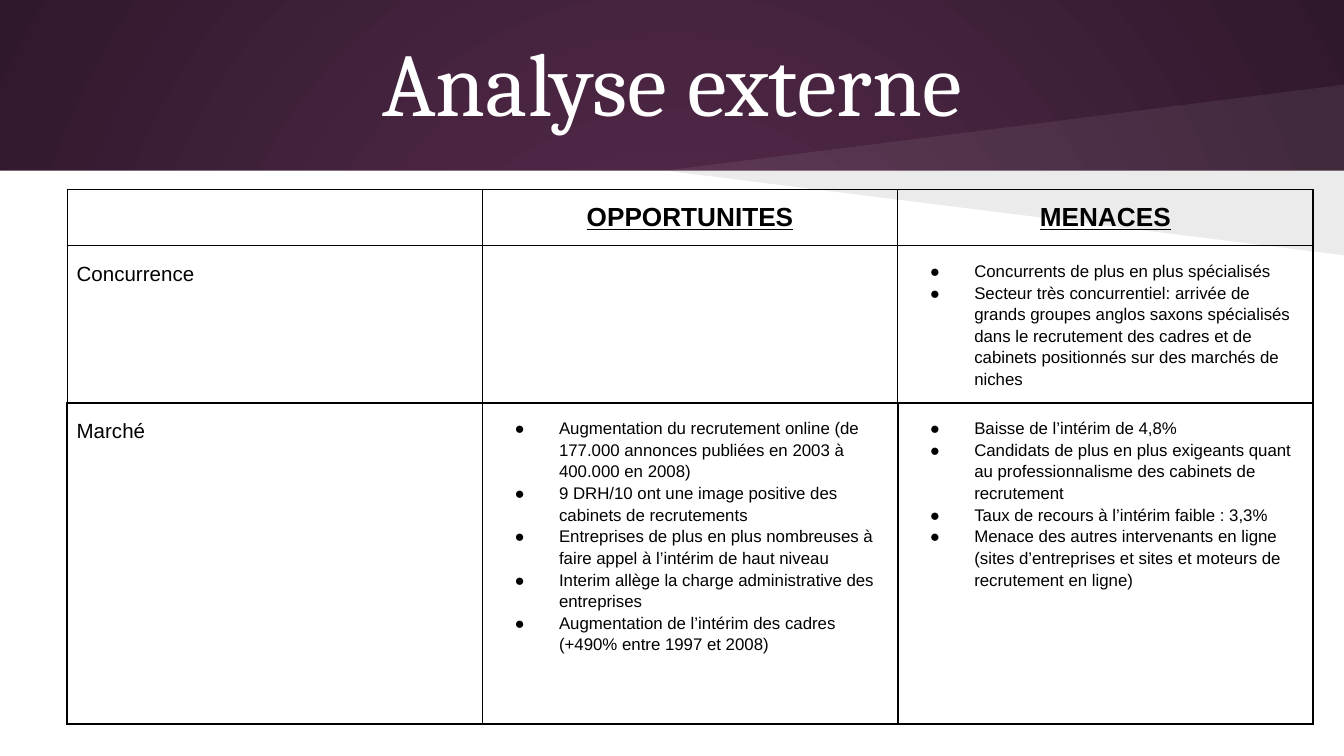
from lxml import etree
from pptx import Presentation
from pptx.dml.color import RGBColor
from pptx.enum import shapes, text
from pptx.oxml import ns
from pptx.util import Inches, Pt

COLORS = {"centre": "592D50", "edge": "30182B", "white": "FFFFFF", "black": "000000"}
SLIDE_WIDTH = 10
SLIDE_HEIGHT = SLIDE_WIDTH * 9 / 16
BAND_BOTTOM = 1.27

OPPORTUNITIES = [
    "Augmentation du recrutement online (de 177.000 annonces publiées en 2003 à 400.000 en 2008)",
    "9 DRH/10 ont une image positive des cabinets de recrutements",
    "Entreprises de plus en plus nombreuses à faire appel à l’intérim de haut niveau",
    "Interim allège la charge administrative des entreprises",
    "Augmentation de l’intérim des cadres (+490% entre 1997 et 2008)",
]
COMPETITION_THREATS = [
    "Concurrents de plus en plus spécialisés",
    "Secteur très concurrentiel: arrivée de grands groupes anglos saxons spécialisés "
    "dans le recrutement des cadres et de cabinets positionnés sur des marchés de niches",
]
MARKET_THREATS = [
    "Baisse de l’intérim de 4,8%",
    "Candidats de plus en plus exigeants quant au professionnalisme des cabinets de recrutement",
    "Taux de recours à l’intérim faible : 3,3%",
    "Menace des autres intervenants en ligne (sites d’entreprises et sites et moteurs "
    "de recrutement en ligne)",
]
ROWS = [
    ([], ["OPPORTUNITES"], ["MENACES"]),
    (["Concurrence"], [], COMPETITION_THREATS),
    (["Marché"], OPPORTUNITIES, MARKET_THREATS),
]
ROW_HEIGHTS = [0.42, 1.17, 2.39]


def rgb(name):
    return RGBColor.from_string(COLORS[name])


def add_child(parent, tag, **attributes):
    return etree.SubElement(parent, ns.qn(tag), attributes)


def paint(shape, color, alpha=None):
    shape.shadow.inherit = False
    shape.line.fill.background()
    shape.fill.solid()
    shape.fill.fore_color.rgb = rgb(color)
    if alpha is not None:
        color_element = shape.element.spPr.find(".//" + ns.qn("a:srgbClr"))
        add_child(color_element, "a:alpha", val=str(alpha * 1000))


def set_background(slide):
    """Radial gradient, from the centre to the edges."""
    fill = slide.background.fill
    fill.gradient()
    for stop, color, position in zip(fill.gradient_stops, ("centre", "edge"), (0, 1)):
        stop.color.rgb = rgb(color)
        stop.position = position
    gradient = slide.element.find(".//" + ns.qn("a:gradFill"))
    gradient.remove(gradient.find(ns.qn("a:lin")))
    circle = add_child(gradient, "a:path", path="circle")
    add_child(circle, "a:fillToRect", l="50000", t="50000", r="50000", b="50000")


def add_wedge(slide, left, top, width, height, color, alpha):
    """Triangle from a point at the left; a negative height opens upwards."""
    builder = slide.shapes.build_freeform(Inches(left), Inches(top))
    builder.add_line_segments([
        (Inches(left + width), Inches(top)),
        (Inches(left + width), Inches(top + height)),
    ])
    paint(builder.convert_to_shape(), color, alpha)


def add_backdrop(slide, left, top, width, height):
    panel = slide.shapes.add_shape(
        shapes.MSO_SHAPE.RECTANGLE, Inches(left), Inches(top), Inches(width), Inches(height))
    paint(panel, "white")
    add_wedge(slide, left + 4.95, top, width - 4.95, -0.64, "white", 7)
    add_wedge(slide, left + 4.95, top, width - 4.95, 0.63, "black", 8)


def place_title(slide, wording, left, top, width, height):
    title = slide.shapes.title
    title.left, title.top = Inches(left), Inches(top)
    title.width, title.height = Inches(width), Inches(height)
    title.text = wording
    title.text_frame.vertical_anchor = text.MSO_ANCHOR.MIDDLE
    paragraph = title.text_frame.paragraphs[0]
    paragraph.alignment = text.PP_ALIGN.CENTER
    paragraph.font.size = Pt(48)
    paragraph.font.name = "Cambria"
    paragraph.font.color.rgb = rgb("white")
    slide.shapes.element.append(title.element)  # in front of the wedges


def set_borders(cell, weights):
    properties = cell._tc.get_or_add_tcPr()
    for index, (side, weight) in enumerate(weights.items()):
        line = etree.Element(ns.qn("a:ln" + side), w=str(Pt(weight)))
        fill = add_child(line, "a:solidFill")
        add_child(fill, "a:srgbClr", val=COLORS["black"])
        properties.insert(index, line)


def add_bullet(paragraph, size):
    properties = paragraph._p.get_or_add_pPr()
    properties.set("marL", str(Inches(0.5)))
    properties.set("indent", str(Inches(-0.33)))
    color = etree.Element(ns.qn("a:buClr"))
    add_child(color, "a:srgbClr", val=COLORS["black"])
    font = properties.find(ns.qn("a:defRPr"))
    for element in (
        color,
        etree.Element(ns.qn("a:buSzPts"), val=str(size * 100)),
        etree.Element(ns.qn("a:buFont"), typeface="Arial"),
        etree.Element(ns.qn("a:buChar"), char="●"),
    ):
        font.addprevious(element)


def fill_cell(cell, lines, is_header, is_label):
    cell.fill.background()
    cell.margin_left = cell.margin_right = Inches(0.1 if is_header else 0.07)
    cell.margin_top = cell.margin_bottom = Inches(0.1)
    cell.text = "\n".join(lines)
    size = 14 if is_header else 11 if is_label else 9
    for paragraph in cell.text_frame.paragraphs:
        font = paragraph.font
        font.name = "Arial"
        font.color.rgb = rgb("black")
        font.size = Pt(size)
        if is_header:
            paragraph.alignment = text.PP_ALIGN.CENTER
            font.bold = font.underline = True
            continue
        paragraph.line_spacing = 1.15
        if lines and not is_label:
            add_bullet(paragraph, size)


def add_analysis_table(slide, left, top, width):
    frame = slide.shapes.add_table(
        len(ROWS), len(ROWS[0]), Inches(left), Inches(top), Inches(width),
        Inches(sum(ROW_HEIGHTS)))
    table = frame.table
    table.first_row = table.horz_banding = False
    for row, (contents, height) in enumerate(zip(ROWS, ROW_HEIGHTS)):
        table.rows[row].height = Inches(height)
        for column, lines in enumerate(contents):
            cell = table.cell(row, column)
            fill_cell(cell, lines, row == 0, column == 0)
            # The market row has a heavier outline
            is_market = row == len(ROWS) - 1
            set_borders(cell, {
                "L": 1 if is_market and column != 1 else 0.75,
                "R": 1 if is_market and column == 1 else 0.75,
                "T": 1 if is_market else 0.75,
                "B": 1 if row > 0 else 0.75,
            })


def main():
    presentation = Presentation()
    presentation.slide_width = Inches(SLIDE_WIDTH)
    presentation.slide_height = Inches(SLIDE_HEIGHT)
    slide = presentation.slides.add_slide(presentation.slide_layouts[5])
    set_background(slide)
    add_backdrop(slide, 0, BAND_BOTTOM, SLIDE_WIDTH, SLIDE_HEIGHT - BAND_BOTTOM)
    place_title(slide, "Analyse externe", 0.5, 0.13, 9, 0.94)
    add_analysis_table(slide, 0.5, 1.41, 9.27)
    presentation.save("out.pptx")


if __name__ == "__main__":
    main()
